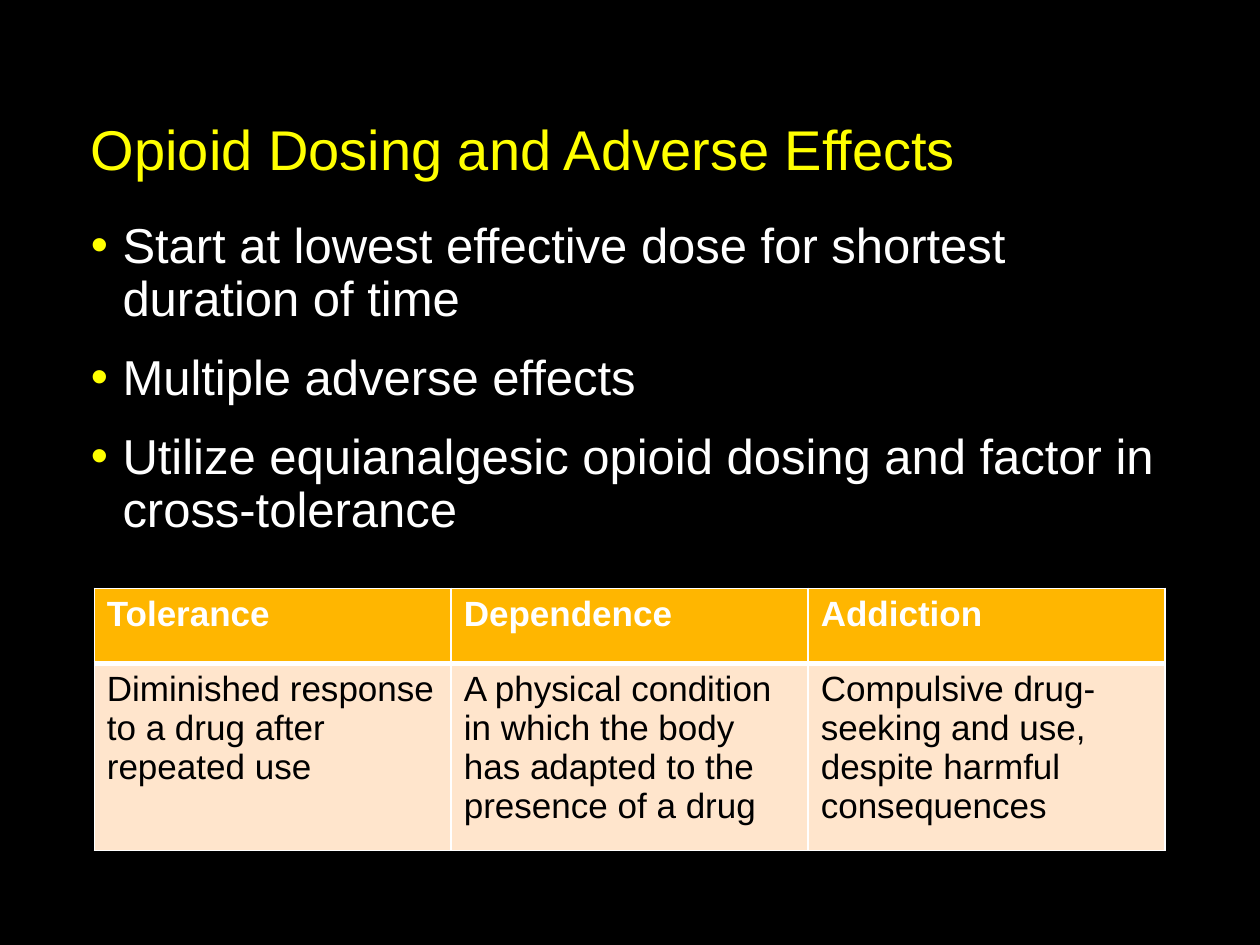
from lxml.etree import SubElement
from pptx import Presentation
from pptx.dml.color import RGBColor
from pptx.enum.text import MSO_ANCHOR, MSO_AUTO_SIZE, PP_ALIGN
from pptx.oxml import parse_xml
from pptx.oxml.ns import nsdecls, qn
from pptx.util import Cm, Pt

TITLE = "Opioid Dosing and Adverse Effects"
BULLETS = [
    "Start at lowest effective dose for shortest duration of time",
    "Multiple adverse effects",
    "Utilize equianalgesic opioid dosing and factor in cross-tolerance",
]
TERMS = [
    ("Tolerance", "Diminished response to a drug after repeated use"),
    ("Dependence", "A physical condition in which the body has adapted to the presence of a drug"),
    ("Addiction", "Compulsive drug-seeking and use, despite harmful consequences"),
]
ROWS = [
    dict(height=1.52, fill="FFB600", color="FFFFFF", bold=True, top=1, bottom=3),
    dict(height=3.76, fill="FFE5CC", color="000000", bold=False, top=3, bottom=1),
]
BLACK, WHITE, YELLOW = "000000", "FFFFFF", "FFFF00"
LEFT, WIDTH, TITLE_H, BODY_H = 1.83, 21.74, 3.81, 13.34
TABLE_LEFT, TABLE_TOP, TABLE_W = 1.9, 11.86, 21.59


def rgb(color):
    return RGBColor.from_string(color)


def write(tf, lines, size, color, bold=False, spacing=None, before=0, bullet=None):
    for i, line in enumerate(lines):
        p = tf.paragraphs[0] if i == 0 else tf.add_paragraph()
        p.alignment = PP_ALIGN.LEFT
        p.line_spacing = spacing
        p.space_before = Pt(before if i else 0)
        if bullet:
            pPr = p._p.get_or_add_pPr()
            pPr.set("marL", str(Cm(0.64)))
            pPr.set("indent", str(-Cm(0.64)))
            SubElement(SubElement(pPr, qn("a:buClr")), qn("a:srgbClr"), val=bullet)
            SubElement(pPr, qn("a:buChar"), char="•")
        r = p.add_run()
        r.text = line
        r.font.name = "Arial"
        r.font.size = Pt(size)
        r.font.bold = bold
        r.font.color.rgb = rgb(color)


def place(sp, top, height, anchor, inset_top):
    sp.left, sp.top, sp.width, sp.height = Cm(LEFT), Cm(top), Cm(WIDTH), Cm(height)
    tf = sp.text_frame
    tf.word_wrap = True
    tf.auto_size = MSO_AUTO_SIZE.NONE
    tf.vertical_anchor = anchor
    tf.margin_left = tf.margin_right = 0
    tf.margin_top, tf.margin_bottom = Cm(inset_top), Cm(0.13)
    return tf


def set_borders(cell, color, **widths):
    tcPr = cell._tc.get_or_add_tcPr()
    for i, side in enumerate("LRTB"):
        tcPr.insert(i, parse_xml(
            f'<a:ln{side} {nsdecls("a")} w="{Pt(widths.get(side, 1))}">'
            f'<a:solidFill><a:srgbClr val="{color}"/></a:solidFill></a:ln{side}>'))


def add_terms(s):
    table = s.shapes.add_table(
        len(ROWS), len(TERMS), Cm(TABLE_LEFT), Cm(TABLE_TOP), Cm(TABLE_W),
        Cm(sum(row["height"] for row in ROWS))).table
    for col in table.columns:
        col.width = Cm(TABLE_W / len(TERMS))
    for i, row in enumerate(ROWS):
        table.rows[i].height = Cm(row["height"])
        for j, term in enumerate(TERMS):
            cell = table.cell(i, j)
            cell.fill.solid()
            cell.fill.fore_color.rgb = rgb(row["fill"])
            set_borders(cell, WHITE, T=row["top"], B=row["bottom"])
            write(cell.text_frame, [term[i]], 20, row["color"], bold=row["bold"])


def main():
    prs = Presentation()
    prs.slide_width, prs.slide_height = Cm(25.4), Cm(19.05)
    s = prs.slides.add_slide(prs.slide_layouts[1])
    s.background.fill.solid()
    s.background.fill.fore_color.rgb = rgb(BLACK)
    title = place(s.shapes.title, 0, TITLE_H, MSO_ANCHOR.BOTTOM, 0.13)
    write(title, [TITLE], 32, YELLOW, spacing=0.9)
    body = place(s.placeholders[1], TITLE_H, BODY_H, MSO_ANCHOR.TOP, 0.64)
    write(body, BULLETS, 28, WHITE, spacing=0.9, before=15, bullet=YELLOW)
    add_terms(s)
    prs.save("out.pptx")


if __name__ == "__main__":
    main()
